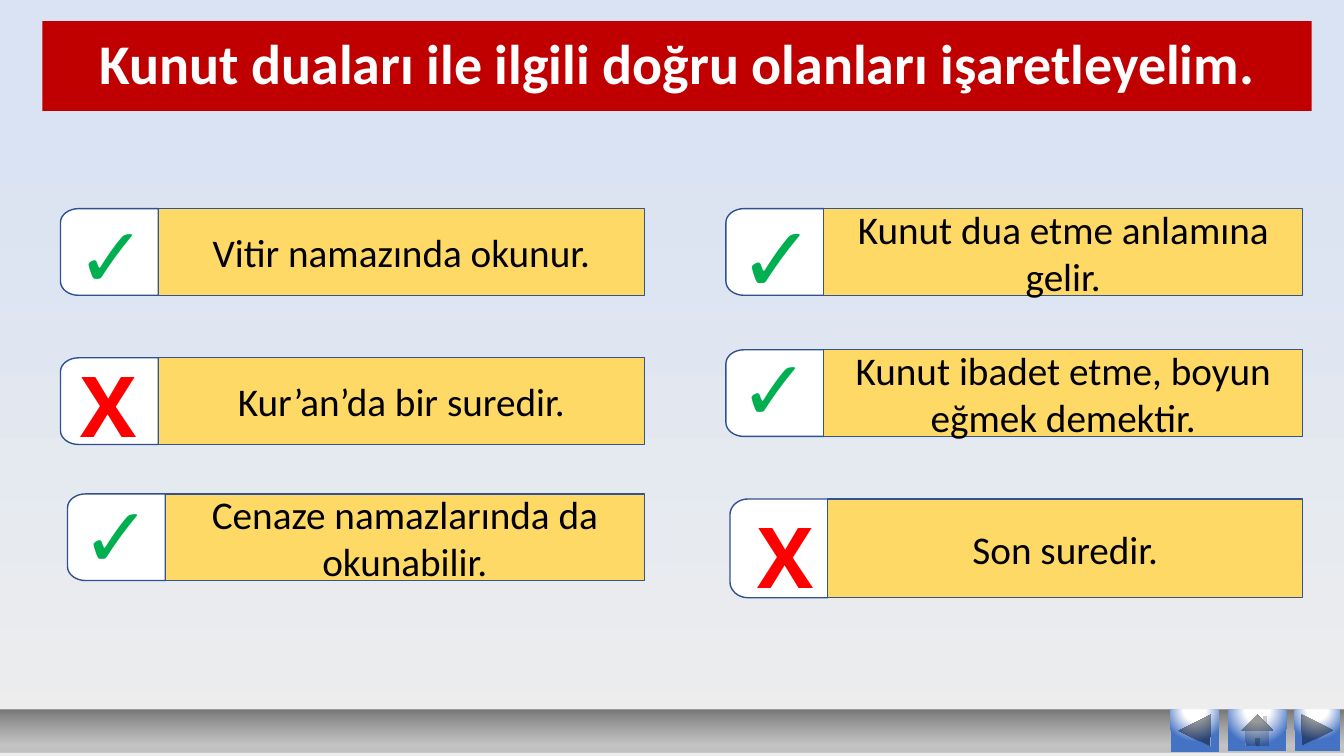
from collections import namedtuple
from dataclasses import dataclass

from lxml import etree
from pptx import Presentation
from pptx.dml.color import RGBColor
from pptx.enum.shapes import MSO_SHAPE
from pptx.enum.text import MSO_ANCHOR, MSO_AUTO_SIZE, PP_ALIGN
from pptx.oxml.ns import qn
from pptx.util import Inches, Pt

RECTANGLE = MSO_SHAPE.RECTANGLE
BACK = MSO_SHAPE.ACTION_BUTTON_BACK_OR_PREVIOUS
FORWARD = MSO_SHAPE.ACTION_BUTTON_FORWARD_OR_NEXT
HOME = MSO_SHAPE.ACTION_BUTTON_HOME
MIDDLE = MSO_ANCHOR.MIDDLE
CENTER = PP_ALIGN.CENTER
FIT_SHAPE = MSO_AUTO_SIZE.SHAPE_TO_FIT_TEXT

Box = namedtuple("Box", "left top width height")
Mark = namedtuple("Mark", "text font color width wrap")
Answer = namedtuple("Answer", "text box mark shift_x shift_y size", defaults=[60])


@dataclass(frozen=True)
class Theme:
    font: str = "Calibri"
    title_size: int = 40
    answer_size: int = 28
    white: str = "FFFFFF"
    black: str = "000000"
    title_fill: str = "C00000"
    label_fill: str = "FFD966"
    label_line: str = "325491"
    mark_line: str = "2F528F"
    # Gradient stops: position, colour, opacity (all positions in percent)
    page_stops: tuple = ((0, "EDEDED", 100), (84, "DAE3F3", 100))
    bar_stops: tuple = ((0, "C0C0C0", 100), (17, "B3B3B3", 70), (100, "777777", 100))
    button_stops: tuple = ((0, "FFFFFF", 100), (35, "FFFFFF", 100), (100, "4472C4", 100))


THEME = Theme()
PAGE = Box(0, 0, 13.33, 7.5)
MARK_WIDTH = 0.97
CHECK = Mark("✓", "TeX Gyre Bonum", "00B050", 1.43, True)
CROSS = Mark("X", "Open Sans", "FF0000", 0.76, False)

LEFT_EDGE, LEFT_END = 0.6, 6.39
RIGHT_EDGE, RIGHT_END = 7.2, 12.92
ROW = 0.86


def span_box(left, right, top, height=ROW):
    return Box(left, top, right - left, height)


ANSWERS = [
    Answer("Vitir namazında okunur.", span_box(LEFT_EDGE, LEFT_END, 2.07), CHECK, -0.21, -0.1),
    Answer("Kur’an’da bir suredir.", span_box(LEFT_EDGE, LEFT_END, 3.55), CROSS, 0.1, -0.09),
    Answer("Cenaze namazlarında da okunabilir.",
           span_box(LEFT_EDGE + 0.07, LEFT_END, 4.9), CHECK, -0.23, -0.15),
    Answer("Kunut dua etme anlamına gelir.",
           span_box(RIGHT_EDGE, RIGHT_END, 2.07), CHECK, -0.21, -0.13, 66),
    Answer("Son suredir.", span_box(RIGHT_EDGE + 0.04, RIGHT_END, 4.95, 0.98), CROSS, 0.17, 0.01),
    Answer("Kunut ibadet etme, boyun eğmek demektir.",
           span_box(RIGHT_EDGE, RIGHT_END, 3.47), CHECK, -0.23, -0.18),
]


def place(box):
    return [Inches(length) for length in box]


def set_gradient(fill, parent, stops, radial=False):
    """Swap the solid fill inside parent for a gradient, upward or radial."""
    fill.solid()
    gradient = etree.Element(qn("a:gradFill"), rotWithShape="1")
    stop_list = etree.SubElement(gradient, qn("a:gsLst"))
    for position, color, opacity in stops:
        stop = etree.SubElement(stop_list, qn("a:gs"), pos=str(position * 1000))
        shade = etree.SubElement(stop, qn("a:srgbClr"), val=color)
        if opacity < 100:
            etree.SubElement(shade, qn("a:alpha"), val=str(opacity * 1000))
    if radial:
        path = etree.SubElement(gradient, qn("a:path"), path="circle")
        etree.SubElement(path, qn("a:fillToRect"), l="50000", t="-80000", r="50000", b="180000")
    else:
        etree.SubElement(gradient, qn("a:lin"), ang="16200000", scaled="0")
    parent.replace(parent.find(qn("a:solidFill")), gradient)


def style(shape, fill=None, line=None):
    shape.shadow.inherit = False
    if fill:
        shape.fill.solid()
        shape.fill.fore_color.rgb = RGBColor.from_string(fill)
    if line:
        shape.line.color.rgb = RGBColor.from_string(line)
        shape.line.width = Pt(1)
    else:
        shape.line.fill.background()


def write(shape, text, size, color, font=THEME.font, bold=False, wrap=True):
    frame = shape.text_frame
    frame.word_wrap = wrap
    para = frame.paragraphs[0]
    para.text = text
    para.alignment = CENTER
    para.font.name = font
    para.font.size = Pt(size)
    para.font.bold = bold
    para.font.color.rgb = RGBColor.from_string(color)
    return para


def make_curve(start, corner, end):
    """Quarter-ellipse segment that bends around the corner point."""
    curve = etree.Element(qn("a:cubicBezTo"))
    controls = [[p + 0.55 * (c - p) for p, c in zip(point, corner)] for point in (start, end)]
    for x, y in (*controls, end):
        etree.SubElement(curve, qn("a:pt"), x=str(round(x)), y=str(round(y)))
    return curve


def add_mark_panel(shapes, box):
    """White panel whose two left corners are rounded."""
    left, top, width, height = place(box)
    radius_x, radius_y = Inches(0.18), round(0.16 * height)
    outline = [(radius_x, 0), (width, 0), (width, height), (radius_x, height),
               (0, height - radius_y), (0, radius_y)]
    corners = [(left + x, top + y) for x, y in outline]
    builder = shapes.build_freeform(*corners[0])
    builder.add_line_segments(corners[1:], close=True)
    panel = builder.convert_to_shape()
    path = panel.element.find(".//" + qn("a:path"))
    bottom_line = path.findall(qn("a:lnTo"))[3]
    path.replace(bottom_line, make_curve(outline[3], (0, height), outline[4]))
    path.find(qn("a:close")).addprevious(make_curve(outline[5], (0, 0), outline[0]))
    style(panel, THEME.white, THEME.mark_line)


def add_answer(page, answer):
    left, top, width, height = answer.box
    # Panel and label
    group = page.shapes.add_group_shape()
    add_mark_panel(group.shapes, Box(left, top, MARK_WIDTH, height))
    label_box = Box(left + MARK_WIDTH, top, width - MARK_WIDTH, height)
    label = group.shapes.add_shape(RECTANGLE, *place(label_box))
    style(label, THEME.label_fill, THEME.label_line)
    write(label, answer.text, THEME.answer_size, THEME.black)
    label.text_frame.vertical_anchor = MIDDLE
    # Check or cross
    mark = answer.mark
    mark_box = Box(left + answer.shift_x, top + answer.shift_y,
                   mark.width, 0.1 + answer.size / 60 * 1.01)
    sign = page.shapes.add_textbox(*place(mark_box))
    write(sign, mark.text, answer.size, mark.color, mark.font, True, mark.wrap)
    sign.text_frame.auto_size = FIT_SHAPE


def add_navigation(page, box):
    bar = page.shapes.add_shape(RECTANGLE, *place(box))
    style(bar)
    set_gradient(bar.fill, bar.element.spPr, THEME.bar_stops)
    buttons = [(BACK, 11.61, 0.48, 0.42), (FORWARD, 12.84, 0.45, 0.41), (HOME, 12.18, 0.58, 0.41)]
    for kind, left, width, height in buttons:
        button = page.shapes.add_shape(kind, *place(Box(box.left + left, box.top, width, height)))
        style(button)
        set_gradient(button.fill, button.element.spPr, THEME.button_stops, radial=True)


def add_title(page, box):
    title = page.shapes.add_shape(RECTANGLE, *place(box))
    style(title, THEME.title_fill)
    para = write(title, "Kunut duaları ile ilgili doğru olanları işaretleyelim.",
                 THEME.title_size, THEME.white, bold=True)
    para.line_spacing = 0.9
    title.text_frame.vertical_anchor = MIDDLE


def main():
    deck = Presentation()
    deck.slide_width, deck.slide_height = Inches(PAGE.width), Inches(PAGE.height)
    page = deck.slides.add_slide(deck.slide_layouts[6])
    fill = page.background.fill
    fill.solid()
    set_gradient(fill, page.element.find(".//" + qn("p:bgPr")), THEME.page_stops)
    for answer in ANSWERS:
        add_answer(page, answer)
    add_navigation(page, Box(0, 7.04, PAGE.width, 0.42))
    add_title(page, Box(0.42, 0.21, 12.59, 0.89))
    deck.save("out.pptx")


if __name__ == "__main__":
    main()
